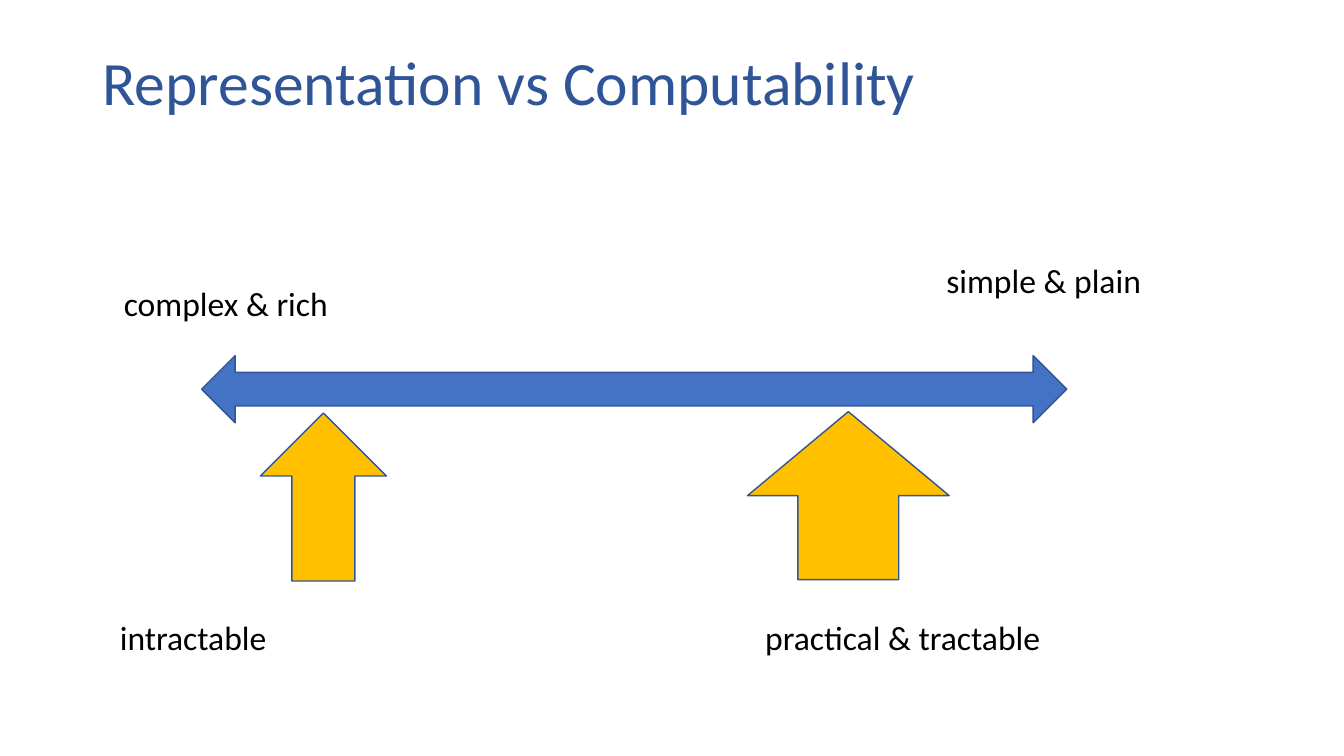
from dataclasses import dataclass

from pptx import Presentation
from pptx.dml.color import RGBColor
from pptx.enum.shapes import MSO_SHAPE as Shape
from pptx.enum.text import MSO_ANCHOR as Anchor
from pptx.enum.text import MSO_AUTO_SIZE as AutoSize
from pptx.enum.text import PP_ALIGN as Align
from pptx.util import Pt


@dataclass(frozen=True)
class Theme:
    font: str = "Calibri"
    title_size: int = 44
    label_size: int = 24
    title_color: str = "2F5597"
    label_color: str = "000000"
    spectrum_fill: str = "4472C4"
    marker_fill: str = "FFC000"
    outline: str = "325491"


THEME = Theme()


def rgb(color):
    return RGBColor.from_string(color)


def style_paragraph(paragraph, size, color):
    paragraph.alignment = Align.LEFT
    paragraph.font.name = THEME.font
    paragraph.font.size = Pt(size)
    paragraph.font.color.rgb = rgb(color)


def set_title(slide, text):
    title = slide.shapes.title
    title.left, title.top = Pt(66), Pt(28.8)
    title.width, title.height = Pt(828), Pt(64.8)
    frame = title.text_frame
    frame.text = text
    frame.auto_size = AutoSize.NONE
    frame.vertical_anchor = Anchor.MIDDLE
    paragraph = frame.paragraphs[0]
    paragraph.line_spacing = 0.9
    style_paragraph(paragraph, THEME.title_size, THEME.title_color)


def add_arrow(slide, kind, left, top, width, height, fill):
    arrow = slide.shapes.add_shape(kind, Pt(left), Pt(top), Pt(width), Pt(height))
    arrow.shadow.inherit = False
    arrow.fill.solid()
    arrow.fill.fore_color.rgb = rgb(fill)
    arrow.line.color.rgb = rgb(THEME.outline)
    arrow.line.width = Pt(1)


def add_label(slide, text, left, top, width):
    label = slide.shapes.add_textbox(Pt(left), Pt(top), Pt(width), Pt(36))
    frame = label.text_frame
    frame.word_wrap = False
    frame.auto_size = AutoSize.SHAPE_TO_FIT_TEXT
    frame.text = text
    style_paragraph(frame.paragraphs[0], THEME.label_size, THEME.label_color)


def main():
    presentation = Presentation()
    presentation.slide_width, presentation.slide_height = Pt(960), Pt(540)
    slide = presentation.slides.add_slide(presentation.slide_layouts.get_by_name("Title Only"))

    set_title(slide, "Representation vs Computability")
    add_arrow(slide, Shape.UP_ARROW, 534, 294, 144, 120, THEME.marker_fill)
    add_arrow(slide, Shape.UP_ARROW, 186, 295, 90, 120, THEME.marker_fill)
    add_arrow(slide, Shape.LEFT_RIGHT_ARROW, 144, 254, 618, 48, THEME.spectrum_fill)

    add_label(slide, "complex & rich", 81.4, 198.7, 161)
    add_label(slide, "simple & plain", 668.9, 182.2, 155)
    add_label(slide, "intractable", 78.5, 437, 126)
    add_label(slide, "practical & tractable", 539.5, 437, 213)

    presentation.save("out.pptx")


if __name__ == "__main__":
    main()
